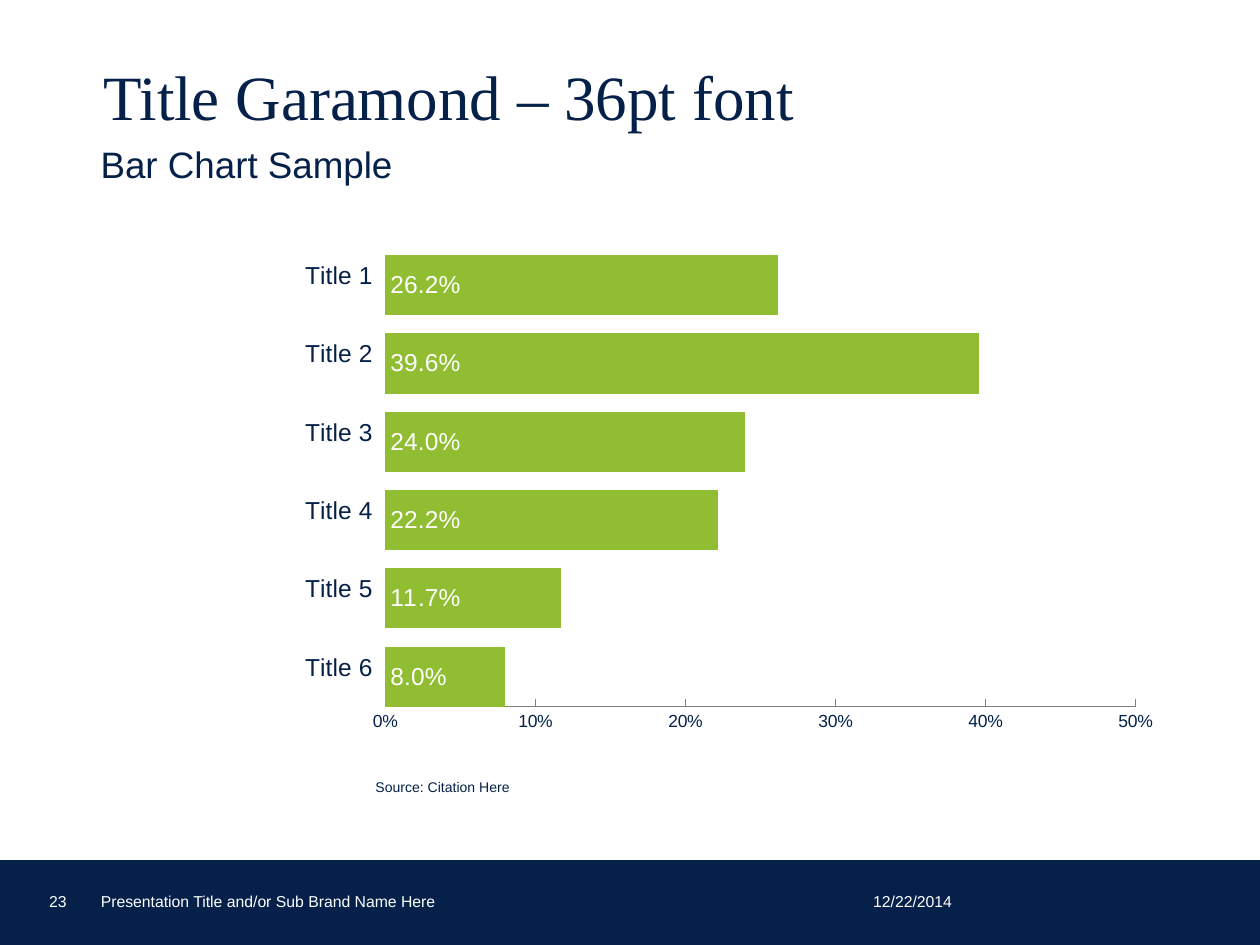
from lxml import etree
from pptx import Presentation
from pptx import util as u
from pptx.chart import data as cd
from pptx.dml.color import RGBColor
from pptx.enum import chart as ec, shapes, text
from pptx.oxml import ns

NAVY = RGBColor(0x05, 0x20, 0x49)
GREEN = RGBColor(0x90, 0xBD, 0x31)
BLUE = RGBColor(0x17, 0x8C, 0xCB)
GREY = RGBColor(0x80, 0x80, 0x80)
WHITE = RGBColor(0xFF, 0xFF, 0xFF)
SANS, SERIF = "Arial", "Times New Roman"
TOP, LOW = text.MSO_ANCHOR.TOP, text.MSO_ANCHOR.BOTTOM


class Deck:
    """Holds the style and the current slide, and adds each kind of element."""

    def __init__(self):
        self.prs = Presentation()
        self.prs.slide_width, self.prs.slide_height = u.Inches(10), u.Inches(7.5)
        self.slide = self.prs.slides.add_slide(self.prs.slide_layouts[5])

    def font(self, font, size, color=NAVY, name=SANS):
        font.size, font.name, font.bold = u.Pt(size), name, False
        font.color.rgb = color

    def words(self, shape, line, size, color=NAVY, name=SANS, anchor=LOW, space=1.0, inset=None):
        frame = shape.text_frame
        frame.word_wrap = True
        frame.auto_size = text.MSO_AUTO_SIZE.NONE
        frame.vertical_anchor = anchor
        if inset is not None:
            frame.margin_left = frame.margin_right = u.Inches(inset)
            frame.margin_top = frame.margin_bottom = u.Inches(inset)
        para = frame.paragraphs[0]
        para.alignment = text.PP_ALIGN.LEFT
        para.line_spacing = space
        run = para.add_run()
        run.text = line
        self.font(run.font, size, color, name)

    def title(self, box, line):
        shape = self.slide.shapes.title
        shape.left, shape.top, shape.width, shape.height = map(u.Inches, box)
        self.words(shape, line, 36, name=SERIF, space=0.85)

    def label(self, box, line, size, **style):
        shape = self.slide.shapes.add_textbox(*map(u.Inches, box))
        self.words(shape, line, size, **style)

    def band(self, box, color):
        shape = self.slide.shapes.add_shape(shapes.MSO_SHAPE.RECTANGLE, *map(u.Inches, box))
        shape.shadow.inherit = False
        shape.fill.solid()
        shape.fill.fore_color.rgb = shape.line.color.rgb = color
        shape.line.width = u.Pt(1.5)

    def bars(self, box, cats, rows, inner):
        data = cd.CategoryChartData(number_format="0.0%")
        data.categories = cats
        for name, vals, _ in rows:
            data.add_series(name, vals)
        kind = ec.XL_CHART_TYPE.BAR_CLUSTERED
        chart = self.slide.shapes.add_chart(kind, *map(u.Inches, box), data).chart
        chart.has_legend = chart.has_title = False
        self.font(chart.font, 18, name=SERIF)
        plot = chart.plots[0]
        plot.vary_by_categories = False
        plot.gap_width, plot.overlap = 0, 70
        for series, (_, _, color) in zip(plot.series, rows):
            series.format.fill.solid()
            series.format.fill.fore_color.rgb = color
        tags = plot.series[0].data_labels
        tags.show_value = True
        tags.number_format, tags.number_format_is_linked = "0.0%", False
        tags.position = ec.XL_LABEL_POSITION.INSIDE_BASE
        self.font(tags.font, 14, WHITE)
        self.axes(chart)
        self.place(chart, inner)

    def axes(self, chart):
        cat, val = chart.category_axis, chart.value_axis
        for axis, size in ((cat, 14), (val, 10)):
            axis.has_major_gridlines = False
            axis.minor_tick_mark = ec.XL_TICK_MARK.NONE
            self.font(axis.tick_labels.font, size)
        cat.major_tick_mark = ec.XL_TICK_MARK.OUTSIDE
        cat.format.line.fill.background()
        val.major_tick_mark = ec.XL_TICK_MARK.INSIDE
        val.format.line.color.rgb = GREY
        val.minimum_scale, val.maximum_scale, val.major_unit = 0, 0.5, 0.1
        val.tick_labels.number_format = "0%"
        val.tick_labels.number_format_is_linked = False

    def place(self, chart, inner):
        area = chart.plots[0]._element.getparent()
        for old in area.findall(ns.qn("c:layout")):
            area.remove(old)
        layout = etree.Element(ns.qn("c:layout"))
        manual = etree.SubElement(layout, ns.qn("c:manualLayout"))
        parts = [("layoutTarget", "inner"), ("xMode", "edge"), ("yMode", "edge")]
        for tag, val in parts + list(zip("xywh", inner)):
            etree.SubElement(manual, ns.qn("c:" + tag)).set("val", str(val))
        area.insert(0, layout)


def main():
    deck = Deck()
    deck.band((0, 6.84, 10, 0.66), NAVY)
    deck.title((0.72, 0.48, 8.84, 0.63), "Title Garamond – 36pt font")
    deck.label((0.7, 1.11, 8.83, 0.42), "Bar Chart Sample", 21, space=0.9)
    for box, line in (
        ((6.93, 7.06, 1.01, 0.17), "12/22/2014"),
        ((0.8, 7.08, 4.71, 0.15), "Presentation Title and/or Sub Brand Name Here"),
        ((0.39, 7.06, 0.27, 0.17), "23"),
    ):
        deck.label(box, line, 9, color=WHITE, inset=0)
    cats = [f"Title {n}" for n in range(6, 0, -1)]
    rows = [
        ("Series 1", (0.08, 0.117, 0.222, 0.24, 0.396, 0.262), GREEN),
        ("Series 2", [None] * len(cats), BLUE),
    ]
    deck.bars((2.25, 1.57, 7.35, 4.44), cats, rows, (0.11, 0.07, 0.81, 0.84))
    deck.label((2.98, 6.19, 1.66, 0.12), "Source: Citation Here", 8, anchor=TOP, space=0.9, inset=0)
    deck.prs.save("out.pptx")


if __name__ == "__main__":
    main()
